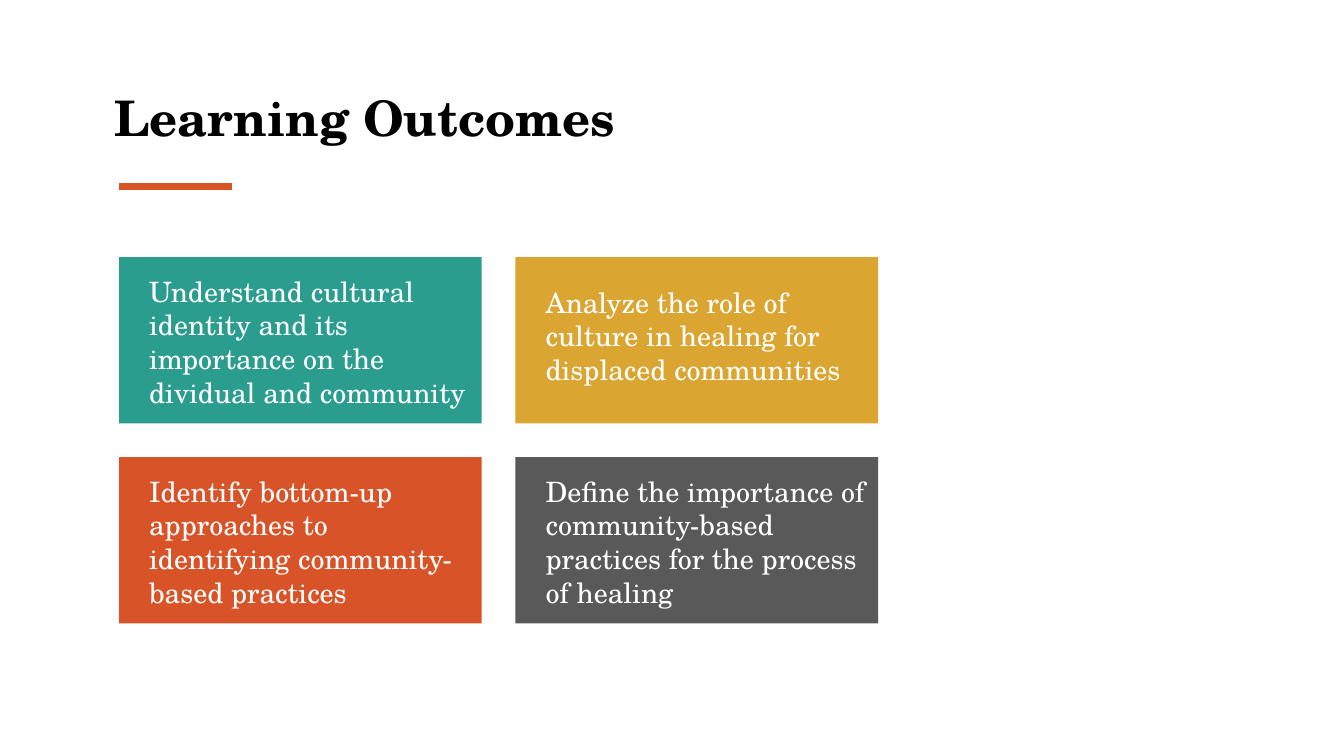
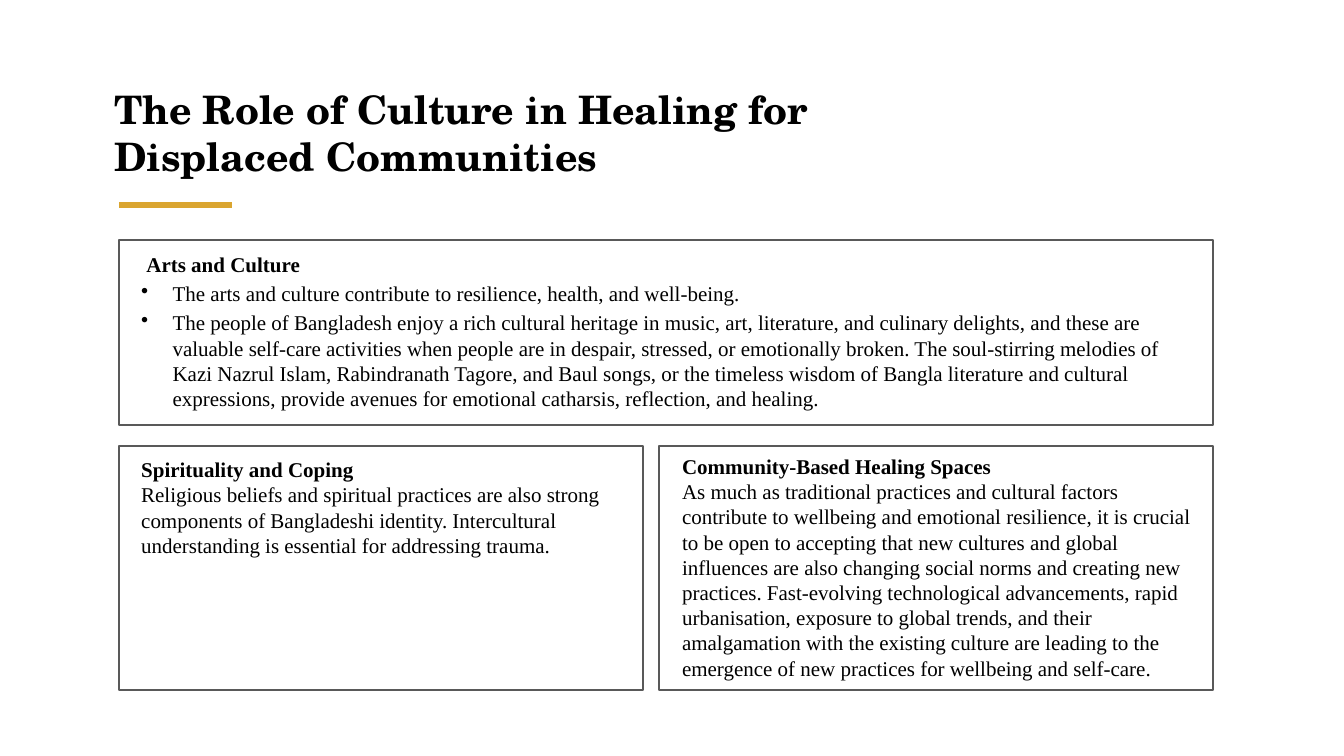
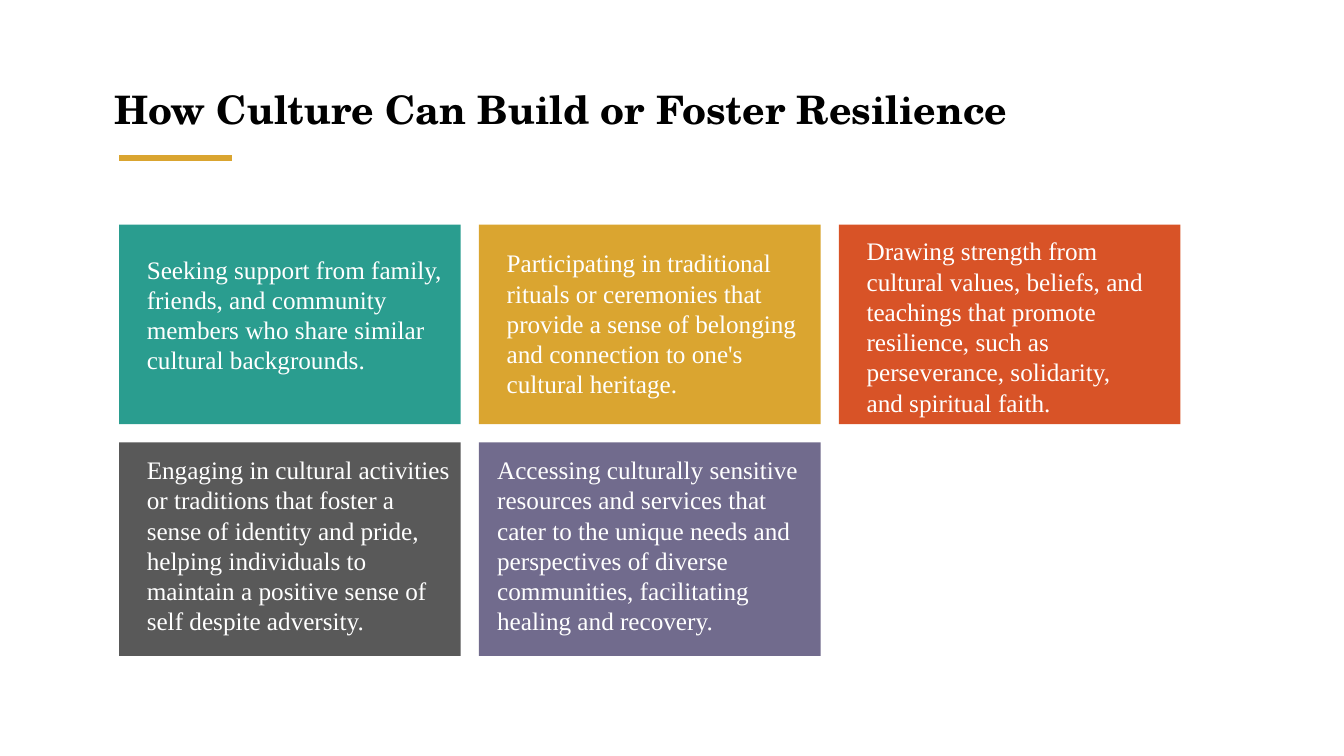
"""Build three slides on culture, healing and resilience."""
from lxml import etree
from pptx import Presentation
from pptx.dml.color import RGBColor
from pptx.enum.shapes import MSO_CONNECTOR, MSO_SHAPE
from pptx.enum.text import MSO_ANCHOR, MSO_AUTO_SIZE, PP_ALIGN
from pptx.oxml.ns import qn
from pptx.util import Cm, Pt

RECT = MSO_SHAPE.RECTANGLE
LINE = MSO_CONNECTOR.STRAIGHT
TOP = MSO_ANCHOR.TOP
LEFT = PP_ALIGN.LEFT
FIXED = MSO_AUTO_SIZE.NONE

HEX = {"teal": "2A9D8F", "gold": "DAA530", "rust": "D85327", "gray": "595959",
       "plum": "716B8D", "black": "000000", "white": "FFFFFF"}
SERIF = "TeX Gyre Schola"
ROMAN = "Times New Roman"
EDGE = 3


def color(name):
    """Return the named colour."""
    return RGBColor.from_string(HEX[name])


def style(para, font, size, tint, bold=False):
    """Align a paragraph left and format its runs."""
    para.alignment = LEFT
    for run in para.runs:
        run.font.name = font
        run.font.size = Pt(size)
        run.font.bold = bold
        run.font.color.rgb = color(tint)


def indent(para, left, first=0, bullet=None):
    """Indent a paragraph and give it a bullet if one is named."""
    props = para._p.get_or_add_pPr()
    props.set("marL", str(Cm(left)))
    props.set("indent", str(Cm(first)))
    if bullet:
        etree.SubElement(props, qn("a:buChar")).set("char", bullet)


def head(deck, text, size, box, rule_y, tint):
    """Add a slide with a title and a short rule below it."""
    slide = deck.slides.add_slide(deck.slide_layouts[5])
    title = slide.shapes.title
    title.left, title.top, title.width, title.height = map(Cm, box)
    frame = title.text_frame
    frame.text = text
    frame.word_wrap = True
    frame.auto_size = FIXED
    frame.vertical_anchor = TOP
    style(frame.paragraphs[0], SERIF, size, "black", True)
    rule = slide.shapes.add_connector(
        LINE, Cm(EDGE), Cm(rule_y), Cm(EDGE + 2.84), Cm(rule_y))
    rule.line.color.rgb = color(tint)
    rule.line.width = Pt(4.5)
    etree.SubElement(rule._element.spPr, qn("a:effectLst"))
    return slide


def block(slide, box, pads, fill=None):
    """Add a filled or outlined box and return its text frame."""
    shape = slide.shapes.add_shape(RECT, *map(Cm, box))
    shape.shadow.inherit = False
    if fill:
        shape.fill.solid()
        shape.fill.fore_color.rgb = color(fill)
        shape.line.fill.background()
    else:
        shape.fill.background()
        shape.line.color.rgb = color("gray")
        shape.line.width = Pt(1.5)
    frame = shape.text_frame
    frame.word_wrap = True
    frame.vertical_anchor = TOP
    frame.margin_left, frame.margin_top, frame.margin_right = map(Cm, pads)
    frame.margin_bottom = 0
    return frame


def grid(slide, start, width, rows, cols, gap, font, size, cards):
    """Lay out filled cards in rows with equal gaps."""
    left, top = start
    for i, (fill, pads, text) in enumerate(cards):
        row, col = divmod(i, cols)
        box = (left + col * (width + gap), top + sum(rows[:row]) + row * gap,
               width, rows[row])
        frame = block(slide, box, pads, fill)
        frame.text = text
        style(frame.paragraphs[0], font, size, "white")


def panel(slide, box, pads, name, texts, bullet=None):
    """Add an outlined box with a bold heading and body text."""
    frame = block(slide, box, pads)
    frame.text = name
    first = frame.paragraphs[0]
    style(first, ROMAN, 15, "black", True)
    if bullet:
        indent(first, 0.13)
    for text in texts:
        para = frame.add_paragraph()
        para.text = text
        if bullet:
            indent(para, 0.79, -0.79, bullet)
            para.space_before = Pt(3)
        style(para, ROMAN, 15, "black")


def goals(deck):
    """Build the learning outcomes slide."""
    slide = head(deck, "Learning Outcomes", 35, (2.62, 2.08, 16.94, 1.75),
                 4.7, "rust")
    pads = (0.76, 0.43, 0.33)
    grid(slide, (EDGE, 6.48), 9.14, (4.19, 4.19), 2, 0.85, SERIF, 20, [
        ("teal", pads, "Understand cultural identity and its importance on "
         "the dividual and community"),
        ("gold", (0.76, 0.71, 0.33), "Analyze the role of culture in healing "
         "for displaced communities"),
        ("rust", pads, "Identify bottom-up approaches to identifying "
         "community-based practices"),
        ("gray", pads, "Define the importance of community-based practices "
         "for the process of healing")])


def role(deck):
    """Build the slide on the role of culture."""
    slide = head(deck, "The Role of Culture in Healing for Displaced "
                 "Communities", 28, (2.62, 2.03, 21, 2.64), 5.16, "gold")
    panel(slide, (EDGE, 6.05, 27.56, 4.67), (0.56, 0.28, 0.74),
          "Arts and Culture", [
              "The arts and culture contribute to resilience, health, and "
              "well-being.",
              "The people of Bangladesh enjoy a rich cultural heritage in "
              "music, art, literature, and culinary delights, and these are "
              "valuable self-care activities when people are in despair, "
              "stressed, or emotionally broken. The soul-stirring melodies "
              "of Kazi Nazrul Islam, Rabindranath Tagore, and Baul songs, or "
              "the timeless wisdom of Bangla literature and cultural "
              "expressions, provide avenues for emotional catharsis, "
              "reflection, and healing."], "•")
    panel(slide, (EDGE, 11.23, 13.21, 6.17), (0.56, 0.28, 0.28),
          "Spirituality and Coping", [
              "Religious beliefs and spiritual practices are also strong "
              "components of Bangladeshi identity. Intercultural "
              "understanding is essential for addressing trauma."])
    panel(slide, (16.61, 11.23, 13.95, 6.17), (0.58, 0.2, 0.51),
          "Community-Based Healing Spaces", [
              "As much as traditional practices and cultural factors "
              "contribute to wellbeing and emotional resilience, it is "
              "crucial to be open to accepting that new cultures and global "
              "influences are also changing social norms and creating new "
              "practices. Fast-evolving technological advancements, rapid "
              "urbanisation, exposure to global trends, and their "
              "amalgamation with the existing culture are leading to the "
              "emergence of new practices for wellbeing and self-care."])


def foster(deck):
    """Build the slide on fostering resilience."""
    slide = head(deck, "How Culture Can Build or Foster Resilience", 28,
                 (2.62, 2.03, 26.14, 1.45), 3.99, "gold")
    grid(slide, (EDGE, 5.66), 8.61, (5.03, 5.38), 3, 0.46, ROMAN, 18, [
        ("teal", (0.7, 0.74, 0.2), "Seeking support from family, friends, "
         "and community members who share similar cultural backgrounds."),
        ("gold", (0.7, 0.58, 0.2), "Participating in traditional rituals or "
         "ceremonies that provide a sense of belonging and connection to "
         "one's cultural heritage."),
        ("rust", (0.7, 0.28, 0.76), "Drawing strength from cultural values, "
         "beliefs, and teachings that promote resilience, such as "
         "perseverance, solidarity, and spiritual faith."),
        ("gray", (0.7, 0.3, 0.2), "Engaging in cultural activities or "
         "traditions that foster a sense of identity and pride, helping "
         "individuals to maintain a positive sense of self despite "
         "adversity."),
        ("plum", (0.46, 0.3, 0.46), "Accessing culturally sensitive resources "
         "and services that cater to the unique needs and perspectives of "
         "diverse communities, facilitating healing and recovery.")])


def main():
    """Build and save the deck."""
    deck = Presentation()
    deck.slide_width, deck.slide_height = Cm(33.87), Cm(19.05)
    goals(deck)
    role(deck)
    foster(deck)
    deck.save("out.pptx")


if __name__ == "__main__":
    main()
